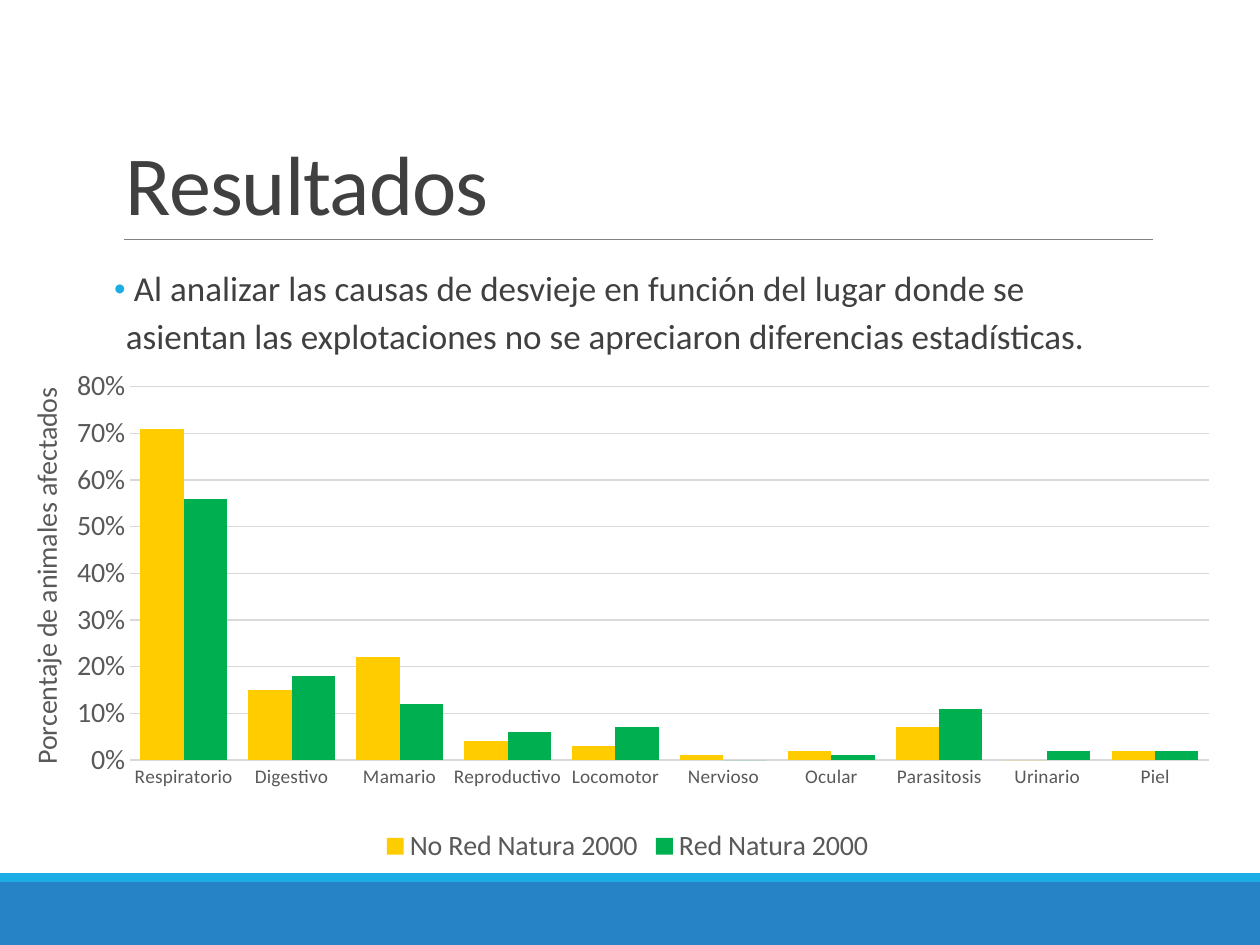
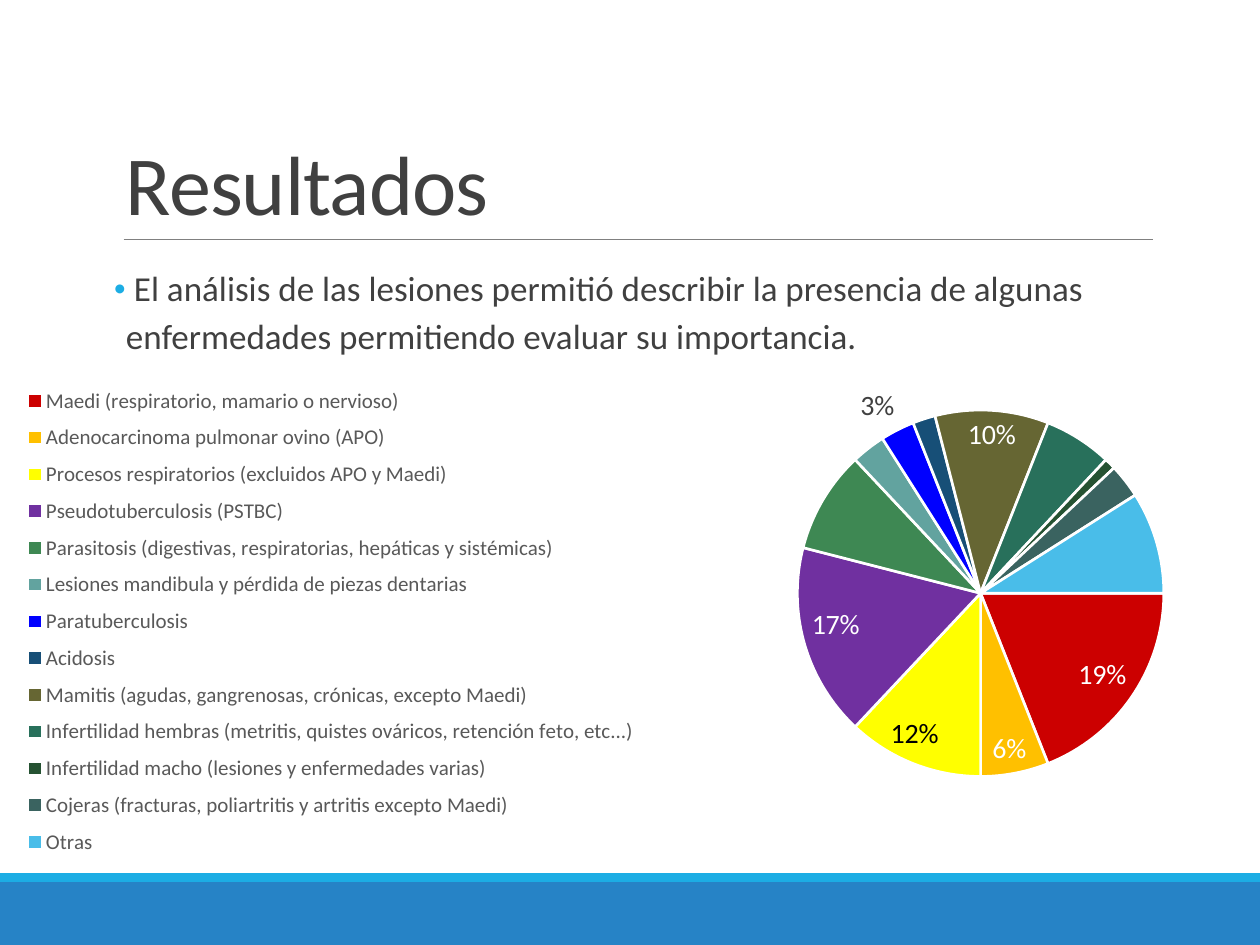
from dataclasses import dataclass

from lxml import etree
from pptx import Presentation
from pptx.chart.data import CategoryChartData
from pptx.dml.color import RGBColor
from pptx.enum.chart import XL_CHART_TYPE, XL_LABEL_POSITION, XL_LEGEND_POSITION, XL_TICK_MARK
from pptx.enum.shapes import MSO_CONNECTOR, MSO_SHAPE
from pptx.enum.text import MSO_ANCHOR
from pptx.oxml.ns import qn
from pptx.util import Cm, Pt

COLUMNS, PIE = XL_CHART_TYPE.COLUMN_CLUSTERED, XL_CHART_TYPE.PIE
INSIDE, OUTSIDE = XL_LABEL_POSITION.INSIDE_END, XL_LABEL_POSITION.OUTSIDE_END
BOTTOM = XL_LEGEND_POSITION.BOTTOM
NO_TICK = XL_TICK_MARK.NONE
RECTANGLE = MSO_SHAPE.RECTANGLE
STRAIGHT = MSO_CONNECTOR.STRAIGHT

TITLE = "Resultados"
ORIGIN_TEXT = (" Al analizar las causas de desvieje en función del lugar donde se "
               "asientan las explotaciones no se apreciaron diferencias estadísticas.")
LESION_TEXT = (" El análisis de las lesiones permitió describir la presencia de algunas "
               "enfermedades permitiendo evaluar su importancia.")

AXIS_TITLE = "Porcentaje de animales afectados"
SYSTEMS = ["Respiratorio", "Digestivo", "Mamario", "Reproductivo", "Locomotor",
           "Nervioso", "Ocular", "Parasitosis", "Urinario", "Piel"]
AREAS = [
    ("No Red Natura 2000", "FFCC00", [0.71, 0.15, 0.22, 0.04, 0.03, 0.01, 0.02, 0.07, 0, 0.02]),
    ("Red Natura 2000", "00B050", [0.56, 0.18, 0.12, 0.06, 0.07, 0, 0.01, 0.11, 0.02, 0.02]),
]

# Disease, percentage, slice colour
LESIONS = [
    ("Maedi (respiratorio, mamario o nervioso)", 19, "CC0000"),
    ("Adenocarcinoma pulmonar ovino (APO)", 6, "FFC000"),
    ("Procesos respiratorios (excluidos APO y Maedi)", 12, "FFFF00"),
    ("Pseudotuberculosis (PSTBC)", 17, "7030A0"),
    ("Parasitosis (digestivas, respiratorias, hepáticas y sistémicas)", 9, "3E8853"),
    ("Lesiones mandibula y pérdida de piezas dentarias", 3, "62A39F"),
    ("Paratuberculosis", 3, "0000FF"),
    ("Acidosis", 2, "174F77"),
    ("Mamitis (agudas, gangrenosas, crónicas, excepto Maedi)", 10, "666633"),
    ("Infertilidad hembras (metritis, quistes ováricos, retención feto, etc...)", 6, "28705B"),
    ("Infertilidad macho (lesiones y enfermedades varias)", 1, "255232"),
    ("Cojeras (fracturas, poliartritis y artritis excepto Maedi)", 3, "3A6360"),
    ("Otras", 9, "49BDE9"),
]
# Slice number: label colour and position
SLICE_LABELS = {
    0: ("FFFFFF", INSIDE), 1: ("FFFFFF", INSIDE), 2: ("000000", INSIDE),
    3: ("FFFFFF", INSIDE), 6: ("404040", OUTSIDE), 8: ("FFFFFF", INSIDE),
}
# Slice number: shift of its label, as fractions of the chart
LABEL_SHIFTS = {1: (0.01, 0), 2: (-0.02, -0.01)}


@dataclass(frozen=True)
class Theme:
    font: str = "Calibri"
    text: str = "404040"
    chart_text: str = "595959"
    grid: str = "D9D9D9"
    rule: str = "808080"
    band: str = "2683C6"
    accent: str = "1CADE4"
    white: str = "FFFFFF"
    title_size: int = 48
    body_size: int = 20
    chart_size: int = 16
    legend_size: int = 12
    category_size: int = 11


THEME = Theme()


def rgb(code):
    return RGBColor.from_string(code)


def style_font(font, size, color):
    font.name, font.size, font.bold = THEME.font, Pt(size), False
    font.color.rgb = rgb(color)


def style_line(line, color, width):
    line.color.rgb = rgb(color)
    line.width = Pt(width)


def add_text(page, text, left, top, width, height, *, size, anchor=MSO_ANCHOR.TOP,
             inset=0.25, line_spacing=1.0, before=0, after=0, tracking=None, bullet=False):
    box = page.shapes.add_textbox(Cm(left), Cm(top), Cm(width), Cm(height))
    frame = box.text_frame
    frame.word_wrap = True
    frame.vertical_anchor = anchor
    frame.margin_left = frame.margin_right = Cm(inset)
    para = frame.paragraphs[0]
    para.line_spacing = line_spacing
    para.space_before, para.space_after = Pt(before), Pt(after)
    span = para.add_run()
    span.text = text
    style_font(span.font, size, THEME.text)
    if tracking:
        span.font._element.set("spc", str(tracking))
    if bullet:
        hang = Cm(0.25)
        properties = para._p.get_or_add_pPr()
        properties.set("marL", str(hang))
        properties.set("indent", str(-hang))
        color = etree.SubElement(properties, qn("a:buClr"))
        etree.SubElement(color, qn("a:srgbClr"), val=THEME.accent)
        etree.SubElement(properties, qn("a:buSzPct"), val="72000")
        etree.SubElement(properties, qn("a:buFont"), typeface=THEME.font)
        etree.SubElement(properties, qn("a:buChar"), char="•")


def add_page(deck, body):
    """Add a slide with the shared bands, rule and title, and its own body text."""
    page = deck.slides.add_slide(deck.slide_layouts[6])
    for top, height, color in ((17.78, 1.27, THEME.band), (17.6, 0.18, THEME.accent)):
        band = page.shapes.add_shape(RECTANGLE, 0, Cm(top), deck.slide_width, Cm(height))
        band.shadow.inherit = False
        band.fill.solid()
        band.fill.fore_color.rgb = rgb(color)
        band.line.fill.background()
    rule = page.shapes.add_connector(STRAIGHT, Cm(2.49), Cm(4.83), Cm(23.24), Cm(4.83))
    style_line(rule.line, THEME.rule, 0.5)
    etree.SubElement(rule._element.spPr, qn("a:effectLst"))
    add_text(page, TITLE, 2.29, 0.78, 20.96, 4.04, size=THEME.title_size,
             anchor=MSO_ANCHOR.BOTTOM, line_spacing=0.85, tracking=-50)
    add_text(page, body, 2.29, 5.13, 20.96, 11.18, size=THEME.body_size, inset=0,
             line_spacing=1.14, before=12, after=2, bullet=True)
    return page


def place_part(part, index, *fractions, mode="edge", inner=False):
    """Fix a chart part at left, top and, if given, width and height, as chart fractions."""
    for old in part.findall(qn("c:layout")):
        part.remove(old)
    layout = etree.Element(qn("c:layout"))
    part.insert(index, layout)
    manual = etree.SubElement(layout, qn("c:manualLayout"))
    settings = [("layoutTarget", "inner")] if inner else []
    settings += [("xMode", mode), ("yMode", mode)]
    settings += zip("xywh", fractions)
    for name, value in settings:
        etree.SubElement(manual, qn(f"c:{name}"), val=str(value))


def add_chart(page, kind, categories, series, place, plot_place, legend_size):
    data = CategoryChartData()
    data.categories = categories
    for name, values in series:
        data.add_series(name, values)
    frame = page.shapes.add_chart(kind, *(Cm(length) for length in place), data)
    chart = frame.chart
    chart.has_title = False
    style_font(chart.font, THEME.chart_size, THEME.chart_text)
    chart.has_legend = True
    chart.legend.position = BOTTOM
    chart.legend.include_in_layout = False
    style_font(chart.legend.font, legend_size, THEME.chart_text)
    place_part(chart.element.find(".//" + qn("c:plotArea")), 0, *plot_place, inner=True)
    return chart


def add_area_columns(page):
    chart = add_chart(page, COLUMNS, SYSTEMS, [(name, values) for name, _, values in AREAS],
                      (0.2, 7.41, 24.9, 10.11), (0.097, 0.038, 0.874, 0.745),
                      THEME.chart_size)
    plot = chart.plots[0]
    plot.vary_by_categories = False
    plot.gap_width, plot.overlap = 50, 0
    for series, (_, color, _) in zip(plot.series, AREAS):
        series.format.fill.solid()
        series.format.fill.fore_color.rgb = rgb(color)
        series.invert_if_negative = False

    categories, values = chart.category_axis, chart.value_axis
    for axis, size in ((categories, THEME.category_size), (values, THEME.chart_size)):
        axis.major_tick_mark = axis.minor_tick_mark = NO_TICK
        style_font(axis.tick_labels.font, size, THEME.chart_text)
    style_line(categories.format.line, THEME.grid, 0.75)
    values.format.line.fill.background()
    values.minimum_scale, values.maximum_scale, values.major_unit = 0, 0.8, 0.1
    values.has_major_gridlines = True
    style_line(values.major_gridlines.format.line, THEME.grid, 0.75)
    values.tick_labels.number_format = "0%"
    values.tick_labels.number_format_is_linked = False
    values.has_title = True
    para = values.axis_title.text_frame.paragraphs[0]
    span = para.add_run()
    span.text = AXIS_TITLE
    style_font(span.font, THEME.chart_size, THEME.chart_text)
    place_part(values.axis_title._element, 1, 0.01, 0.03)


def add_lesion_pie(page):
    names, shares, colors = zip(*LESIONS)
    chart = add_chart(page, PIE, names, [("Series 1", shares)],
                      (0.2, 7.39, 25.4, 10.08), (0.625, 0.087, 0.291, 0.733),
                      THEME.legend_size)
    place_part(chart.legend._element, 1, 0, 0.02, 0.51, 0.98)
    plot = chart.plots[0]
    plot.vary_by_categories = True
    points = plot.series[0].points
    for number, color in enumerate(colors):
        look = points[number].format
        look.fill.solid()
        look.fill.fore_color.rgb = rgb(color)
        style_line(look.line, THEME.white, 1.5)
    for number, (color, position) in SLICE_LABELS.items():
        label = points[number].data_label
        style_font(label.font, THEME.chart_size, color)
        label.position = position

    for tag in ("c:showVal", "c:showLeaderLines"):
        for flag in chart.element.iter(qn(tag)):
            flag.set("val", "0")
    for label in chart.element.iter(qn("c:dLbl")):
        label.find(qn("c:showPercent")).set("val", "1")
        number = int(label.find(qn("c:idx")).get("val"))
        if number in LABEL_SHIFTS:
            place_part(label, 1, *LABEL_SHIFTS[number], mode="factor")
    pie = chart.element.find(".//" + qn("c:pieChart"))
    for old in pie.findall(qn("c:firstSliceAng")):
        pie.remove(old)
    etree.SubElement(pie, qn("c:firstSliceAng"), val="90")


def main():
    deck = Presentation()
    deck.slide_width, deck.slide_height = Cm(25.4), Cm(19.05)
    add_area_columns(add_page(deck, ORIGIN_TEXT))
    add_lesion_pie(add_page(deck, LESION_TEXT))
    deck.save("out.pptx")


if __name__ == "__main__":
    main()
